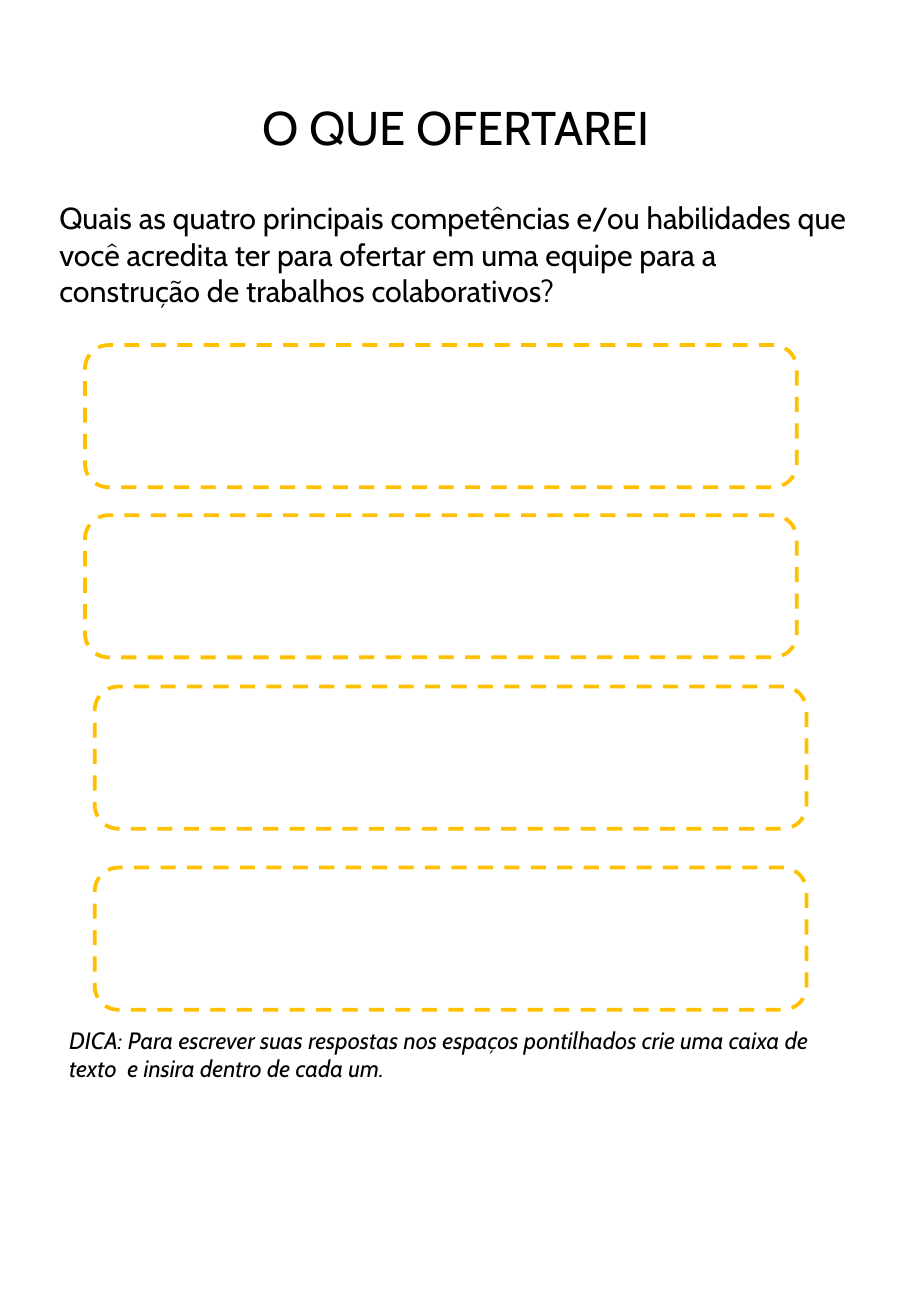
"""Build the worksheet slide about skills offered to a team."""
from dataclasses import dataclass

from pptx import Presentation
from pptx.dml.color import RGBColor
from pptx.enum.dml import MSO_LINE
from pptx.enum.shapes import MSO_SHAPE
from pptx.enum.text import MSO_ANCHOR, PP_ALIGN
from pptx.util import Inches, Pt

DASH = MSO_LINE.DASH
ROUNDED = MSO_SHAPE.ROUNDED_RECTANGLE
TOP, MIDDLE = MSO_ANCHOR.TOP, MSO_ANCHOR.MIDDLE
LEFT, CENTER = PP_ALIGN.LEFT, PP_ALIGN.CENTER


@dataclass(frozen=True)
class Theme:
    font: str = "Cabin"
    ink: RGBColor = RGBColor(0, 0, 0)
    paper: RGBColor = RGBColor(255, 255, 255)
    frame: RGBColor = RGBColor(255, 192, 0)
    frame_width: float = 2.25
    title_size: int = 28
    question_size: int = 18
    tip_size: int = 14


theme = Theme()


def add_text(slide, box, text, size, italic=False, align=LEFT, anchor=TOP):
    shape = slide.shapes.add_textbox(*map(Inches, box))
    frame = shape.text_frame
    frame.word_wrap = True
    frame.vertical_anchor = anchor
    paragraph = frame.paragraphs[0]
    paragraph.alignment = align
    run = paragraph.add_run()
    run.text = text
    run.font.name = theme.font
    run.font.size = Pt(size)
    run.font.italic = italic
    run.font.color.rgb = theme.ink


presentation = Presentation()
presentation.slide_width = Inches(7.5)
presentation.slide_height = Inches(10.83)
slide = presentation.slides.add_slide(presentation.slide_layouts[6])
slide.background.fill.solid()
slide.background.fill.fore_color.rgb = theme.paper

add_text(slide, (0.38, 0.43, 6.75, 1.23), "O QUE OFERTAREI",
         theme.title_size, align=CENTER, anchor=MIDDLE)
add_text(slide, (0.39, 1.59, 6.72, 1.01),
         "Quais as quatro principais competências e/ou habilidades que você "
         "acredita ter para ofertar em uma equipe para a construção de "
         "trabalhos colaborativos?", theme.question_size)

answer_positions = [(0.7, 2.84), (0.7, 4.24), (0.78, 5.65), (0.78, 7.14)]
for left, top in answer_positions:
    answer_box = slide.shapes.add_shape(
        ROUNDED, Inches(left), Inches(top), Inches(5.86), Inches(1.17))
    answer_box.shadow.inherit = False
    answer_box.fill.background()
    answer_box.line.color.rgb = theme.frame
    answer_box.line.width = Pt(theme.frame_width)
    answer_box.line.dash_style = DASH

add_text(slide, (0.47, 8.39, 6.33, 0.57),
         "DICA: Para escrever suas respostas nos espaços pontilhados crie uma "
         "caixa de texto  e insira dentro de cada um.",
         theme.tip_size, italic=True)

presentation.save("out.pptx")
